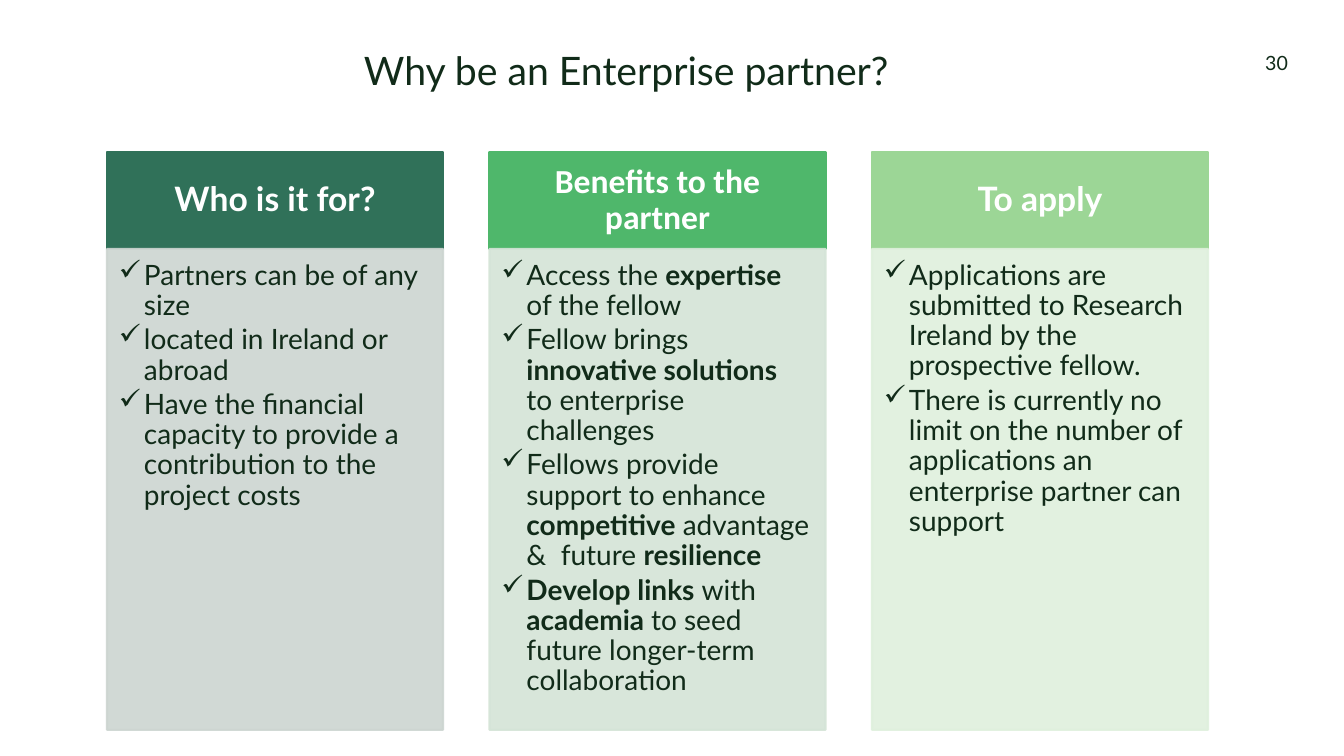
from lxml import etree
from pptx import Presentation, util as u
from pptx.dml.color import RGBColor
from pptx.enum import shapes, text
from pptx.oxml.ns import qn

# Content: each bullet is a list of (wording, bold) spans
TITLE = "Why be an Enterprise partner?"
PAGE_NUMBER = "30"
INK = RGBColor(0x11, 0x2B, 0x19)
WHITE = RGBColor(0xFF, 0xFF, 0xFF)
COLUMNS = [
    {
        "heading": "Who is it for?", "font": "Lato",
        "dark": RGBColor(0x30, 0x71, 0x59), "pale": RGBColor(0xCD, 0xD5, 0xD1),
        "bullets": [
            [("Partners can be of any size", False)],
            [("located in Ireland or abroad", False)],
            [("Have the financial capacity to provide a contribution to the project costs", False)],
        ],
    },
    {
        "heading": "Benefits to the partner", "font": "Calibri",
        "dark": RGBColor(0x4F, 0xB7, 0x6B), "pale": RGBColor(0xD4, 0xE4, 0xD7),
        "bullets": [
            [("Access the ", False), ("expertise ", True), ("of the fellow", False)],
            [("Fellow brings ", False), ("innovative solutions", True),
             (" to enterprise challenges", False)],
            [("Fellows provide support to enhance ", False), ("competitive", True),
             (" advantage &  future ", False), ("resilience", True)],
            [("Develop links ", True), ("with", False), (" academia ", True),
             ("to seed future longer-term collaboration", False)],
        ],
    },
    {
        "heading": "To apply", "font": "Lato",
        "dark": RGBColor(0x9C, 0xD6, 0x96), "pale": RGBColor(0xDF, 0xF0, 0xDD),
        "bullets": [
            [("Applications are submitted to Research Ireland by the prospective fellow.", False)],
            [("There is currently no limit on the number of applications an "
              "enterprise partner can support", False)],
        ],
    },
]

# Layout in px
PX = 914400 / 100.8
PAGE_W, PAGE_H = 1344, 756
LEFT, SPAN, COLUMN_W = 107, 1101, 336
HEAD_TOP, HEAD_H, BODY_H = 152, 97, 481
PITCH = (SPAN - COLUMN_W) / (len(COLUMNS) - 1)
INDENT = 25


def px(length):
    return u.Emu(round(length * PX))


def set_frame(frame, insets, anchor):
    frame.word_wrap = True
    frame.auto_size = text.MSO_AUTO_SIZE.NONE
    frame.vertical_anchor = anchor
    (frame.margin_left, frame.margin_top,
     frame.margin_right, frame.margin_bottom) = map(px, insets)


def style_span(span, size, color, font="Lato", bold=False):
    span.font.size = u.Pt(size)
    span.font.name = font
    span.font.bold = bold
    span.font.color.rgb = color


def write_line(frame, wording, align, size, color, **style):
    frame.text = wording
    para = frame.paragraphs[0]
    para.alignment = align
    para.line_spacing = 0.9
    style_span(para.runs[0], size, color, **style)


def add_panel(left, top, height, color):
    panel = page.shapes.add_shape(shapes.MSO_SHAPE.RECTANGLE,
                                  px(left), px(top), px(COLUMN_W), px(height))
    panel.shadow.inherit = False
    panel.fill.solid()
    panel.fill.fore_color.rgb = color
    panel.line.color.rgb = color
    panel.line.width = u.Pt(1.5)
    return panel


def add_bullet(para, spans):
    para.alignment = text.PP_ALIGN.LEFT
    para.line_spacing = 0.9
    para.space_after = u.Pt(3)
    props = para._p.get_or_add_pPr()
    props.set("marL", str(px(INDENT)))
    props.set("indent", str(-px(INDENT)))
    etree.SubElement(props, qn("a:buChar")).set("char", "✓")
    for wording, bold in spans:
        span = para.add_run()
        span.text = wording
        style_span(span, 20, INK, bold=bold)


deck = Presentation()
deck.slide_width, deck.slide_height = px(PAGE_W), px(PAGE_H)
page = deck.slides.add_slide(deck.slide_layouts.get_by_name("Title Only"))

# Title
title = page.shapes.title
title.left, title.top, title.width, title.height = map(px, (364, 52, 875, 91))
set_frame(title.text_frame, (0, 0, 0, 0), text.MSO_ANCHOR.TOP)
write_line(title.text_frame, TITLE, text.PP_ALIGN.LEFT, 28, INK)

# Page number
number = page.shapes.add_textbox(*map(px, (1228, 54, 60, 70)))
set_frame(number.text_frame, (0, 0, 0, 0), text.MSO_ANCHOR.TOP)
write_line(number.text_frame, PAGE_NUMBER, text.PP_ALIGN.RIGHT, 14, INK)

# Columns: heading above a pale panel of ticks
for index, column in enumerate(COLUMNS):
    left = LEFT + index * PITCH
    head = add_panel(left, HEAD_TOP, HEAD_H, column["dark"])
    set_frame(head.text_frame, (19, 11, 19, 11), text.MSO_ANCHOR.MIDDLE)
    write_line(head.text_frame, column["heading"], text.PP_ALIGN.CENTER, 24, WHITE,
               font=column["font"], bold=True)

    body = add_panel(left, HEAD_TOP + HEAD_H, BODY_H, column["pale"])
    for color in body._element.spPr.iter(qn("a:srgbClr")):
        etree.SubElement(color, qn("a:alpha")).set("val", "90000")
    frame = body.text_frame
    set_frame(frame, (12, 12, 16, 17), text.MSO_ANCHOR.TOP)
    for row, spans in enumerate(column["bullets"]):
        add_bullet(frame.add_paragraph() if row else frame.paragraphs[0], spans)

deck.save("out.pptx")
